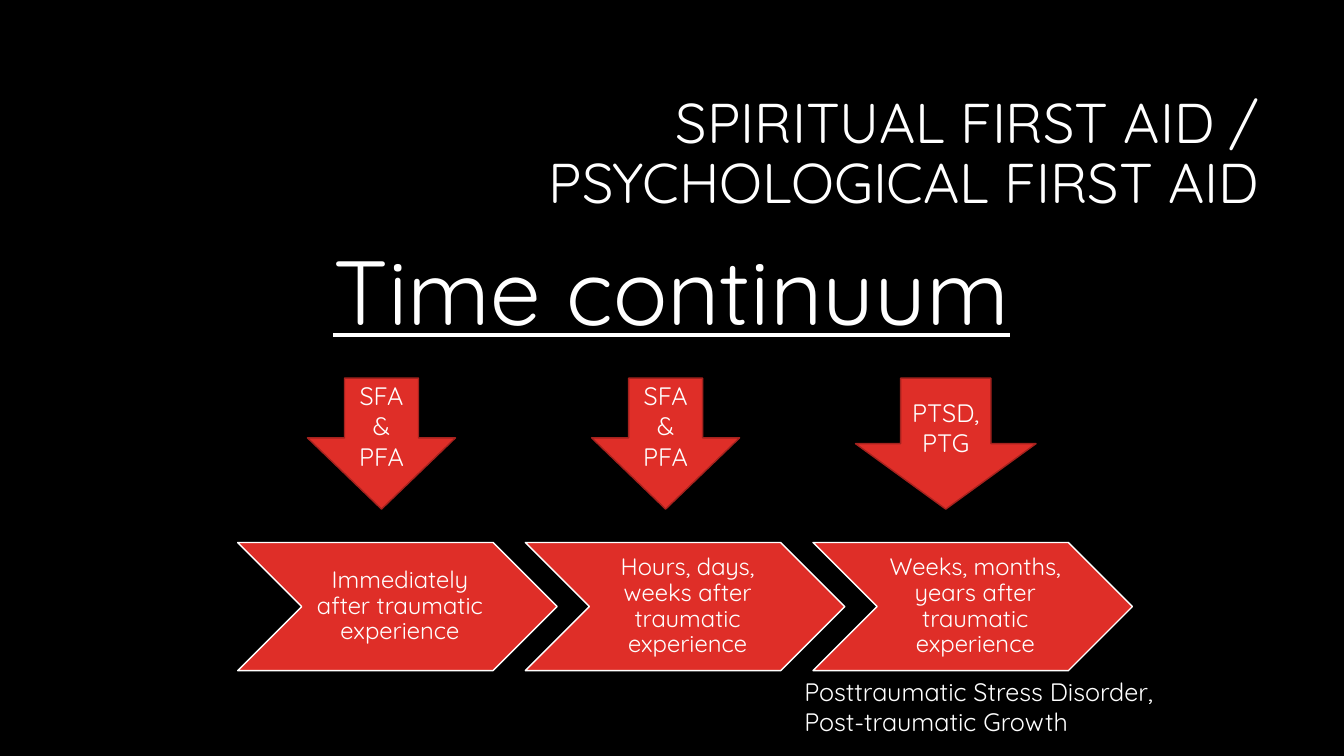
from dataclasses import dataclass

from lxml import etree
from pptx import Presentation
from pptx import util as u
from pptx.dml.color import RGBColor
from pptx.enum import shapes, text
from pptx.oxml import ns

FONT = "Quicksand"
WHITE = "FFFFFF"
RED = "DF2E28"
DARK_RED = "A5221E"
BLACK = "000000"

STAGE_LEFT, STAGE_STEP = 5.99, 7.25
STAGE_TOP, STAGE_WIDTH, STAGE_HEIGHT = 13.67, 8.05, 3.23
ARROW_TOP, ARROW_HEIGHT = 9.53, 3.3


@dataclass
class Response:
    lines: list[str]
    left: float
    width: float
    head: float


STAGES = [
    "Immediately after traumatic experience",
    "Hours, days, weeks after traumatic experience",
    "Weeks, months, years after traumatic experience",
]
RESPONSES = [
    Response(["SFA & PFA"], 7.75, 3.73, 0.544),
    Response(["SFA & PFA"], 14.91, 3.73, 0.544),
    Response(["PTSD,", "PTG"], 21.56, 4.55, 0.5),
]


def color(hex_code: str) -> RGBColor:
    return RGBColor.from_string(hex_code)


def place(part, left: float, top: float, width: float, height: float) -> None:
    part.left, part.top = u.Cm(left), u.Cm(top)
    part.width, part.height = u.Cm(width), u.Cm(height)


def write(frame, lines: list[str], size: float, align, anchor,
          spacing: float = 1.0, underline: bool = False,
          bullet_free: bool = False) -> None:
    frame.word_wrap = True
    frame.auto_size = text.MSO_AUTO_SIZE.NONE
    frame.vertical_anchor = anchor
    frame.text = "\n".join(lines)
    for paragraph in frame.paragraphs:
        paragraph.alignment = align
        paragraph.line_spacing = spacing
        paragraph.space_before = u.Pt(0)
        if bullet_free:
            properties = paragraph._p.get_or_add_pPr()
            properties.set("marL", "0")
            properties.set("indent", "0")
            etree.SubElement(properties, ns.qn("a:buNone"))
        font = paragraph.font
        font.name = FONT
        font.size = u.Pt(size)
        font.color.rgb = color(WHITE)
        if underline:
            font.underline = True


def add_red_shape(slide, kind, left: float, top: float, width: float,
                  height: float, outline: str):
    shape = slide.shapes.add_shape(
        kind, u.Cm(left), u.Cm(top), u.Cm(width), u.Cm(height))
    shape.shadow.inherit = False
    shape.fill.solid()
    shape.fill.fore_color.rgb = color(RED)
    shape.line.color.rgb = color(outline)
    shape.line.width = u.Pt(1)
    return shape


def add_stage(slide, index: int, label: str) -> None:
    stage = add_red_shape(
        slide, shapes.MSO_SHAPE.CHEVRON, STAGE_LEFT + index * STAGE_STEP,
        STAGE_TOP, STAGE_WIDTH, STAGE_HEIGHT, WHITE)
    frame = stage.text_frame
    frame.margin_left = u.Cm(0.18)
    frame.margin_right = frame.margin_top = frame.margin_bottom = u.Cm(0.05)
    write(frame, [label], 17, text.PP_ALIGN.CENTER, text.MSO_ANCHOR.MIDDLE, 0.9)


def add_response(slide, response: Response) -> None:
    arrow = add_red_shape(
        slide, shapes.MSO_SHAPE.DOWN_ARROW, response.left, ARROW_TOP,
        response.width, ARROW_HEIGHT, DARK_RED)
    arrow.adjustments[1] = response.head
    write(arrow.text_frame, response.lines, 18,
          text.PP_ALIGN.CENTER, text.MSO_ANCHOR.MIDDLE)


def main() -> None:
    deck = Presentation()
    deck.slide_width, deck.slide_height = u.Cm(33.87), u.Cm(19.05)
    slide = deck.slides.add_slide(deck.slide_layouts[1])
    slide.background.fill.solid()
    slide.background.fill.fore_color.rgb = color(BLACK)

    title = slide.shapes.title
    place(title, 8.05, 2.13, 23.93, 3.58)
    write(title.text_frame, ["SPIRITUAL FIRST AID / PSYCHOLOGICAL FIRST AID"],
          40, text.PP_ALIGN.RIGHT, text.MSO_ANCHOR.MIDDLE, 0.9)

    continuum = slide.placeholders[1]
    place(continuum, 1.9, 6.1, 30.05, 11.18)
    write(continuum.text_frame, ["Time continuum"], 65, text.PP_ALIGN.CENTER,
          text.MSO_ANCHOR.TOP, 0.9, underline=True, bullet_free=True)

    for index, label in enumerate(STAGES):
        add_stage(slide, index, label)
    for response in RESPONSES:
        add_response(slide, response)

    glossary = slide.shapes.add_textbox(
        u.Cm(20.02), u.Cm(16.92), u.Cm(10.29), u.Cm(1.8))
    write(glossary.text_frame,
          ["Posttraumatic Stress Disorder,", "Post-traumatic Growth"], 18,
          text.PP_ALIGN.LEFT, text.MSO_ANCHOR.TOP)

    deck.save("out.pptx")


if __name__ == "__main__":
    main()
